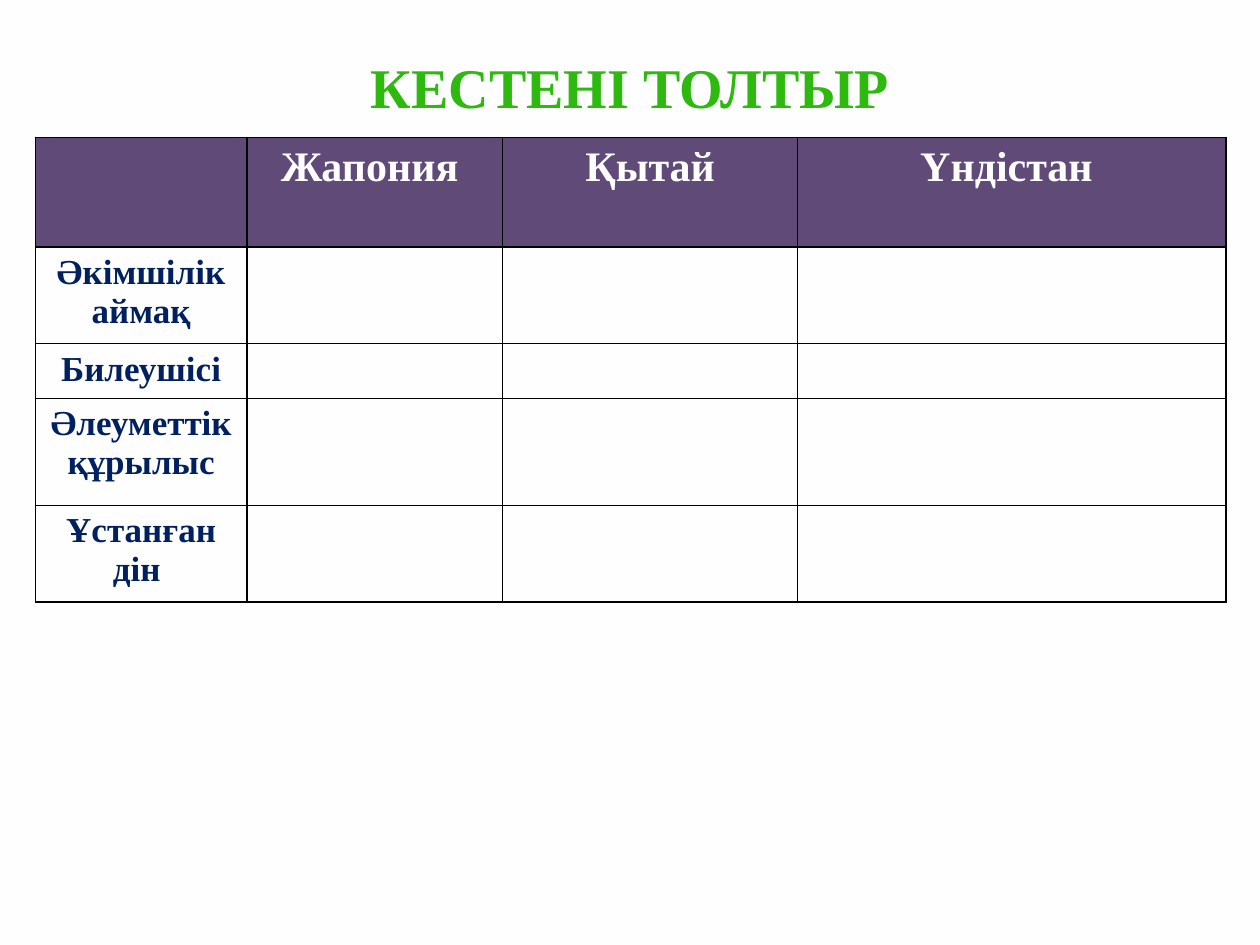
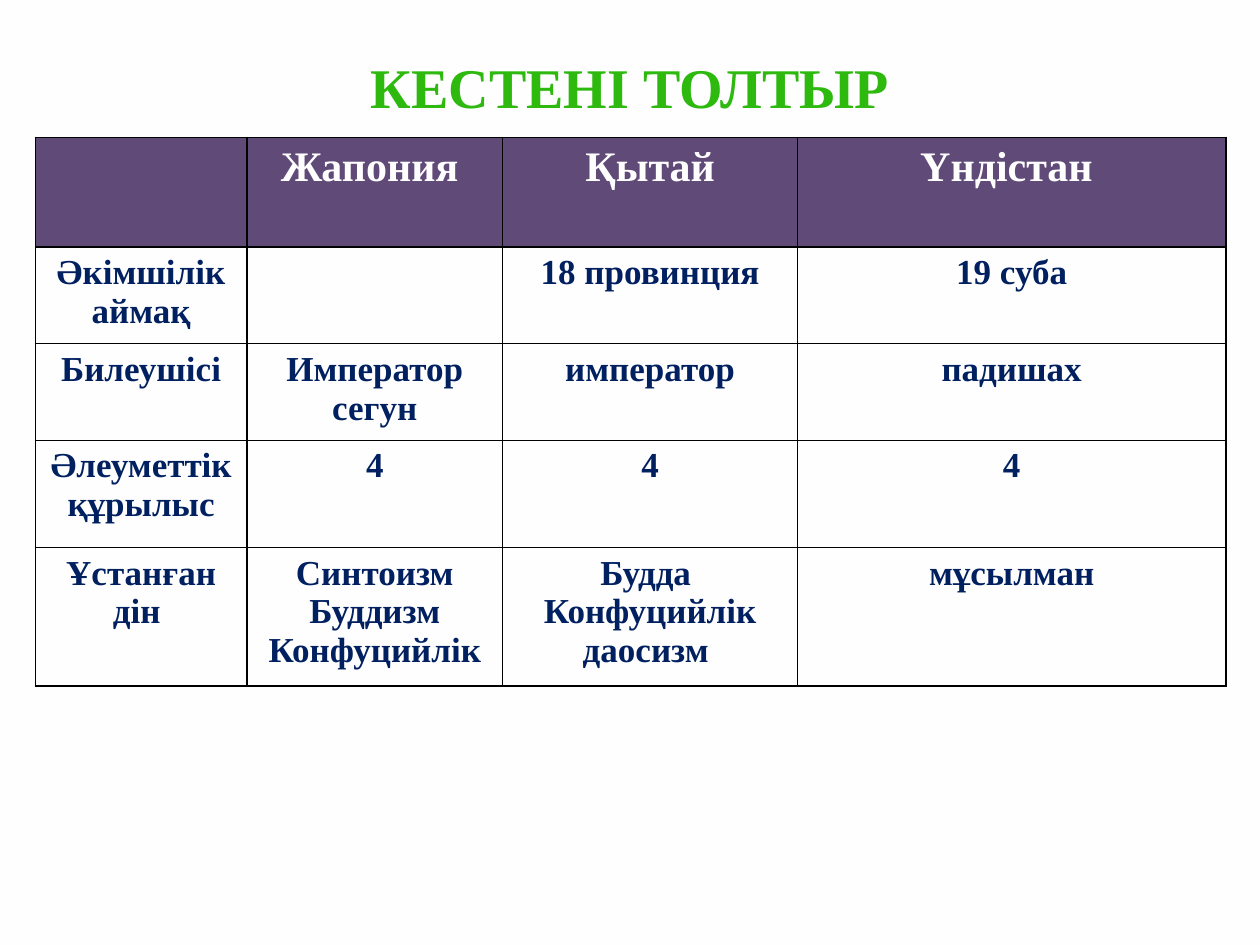
from lxml import etree
from pptx import Presentation
from pptx.dml.color import RGBColor
from pptx.enum import text
from pptx.oxml import ns
from pptx.util import Inches, Pt

COLORS = {
    "paper": "FFFEFF",
    "title": "2DB90E",
    "header": "604A78",
    "entry": "002060",
    "border": "000000",
}
FONT = "Times New Roman"
TITLE = "КЕСТЕНІ ТОЛТЫР"
TITLE_BOX = (0.5, 0.06, 9, 1.25)
TABLE_BOX = (0.28, 1.09, 9.45)
COLUMN_WIDTHS = (1.68, 2.03, 2.34, 3.4)
COUNTRIES = ("", "Жапония ", "Қытай", "Үндістан ")
TOPICS = ("Әкімшілік аймақ", "Билеушісі", "Әлеуметтік құрылыс", "Ұстанған дін ")
BLANK_ANSWERS = [("", "", "")] * len(TOPICS)
ANSWERS = [
    ("", "18 провинция", "19 суба"),
    ("Император\nсегун", "император", "падишах"),
    ("4", "4", "4"),
    ("Синтоизм\nБуддизм\nКонфуцийлік", "Будда \nКонфуцийлік\nдаосизм ", "мұсылман"),
]
BLANK_HEIGHTS = (0.87, 0.72, 0.41, 0.85, 0.72)
ANSWER_HEIGHTS = (0.87, 0.72, 0.72, 0.85, 1.03)


def write(frame, words, size, color):
    """Fill a text frame with centred bold paragraphs, one per line."""
    frame.text = words
    for paragraph in frame.paragraphs:
        paragraph.alignment = text.PP_ALIGN.CENTER
        font = paragraph.font
        font.name, font.size, font.bold = FONT, Pt(size), True
        font.color.rgb = RGBColor.from_string(COLORS[color])


def add_borders(cell):
    """Draw a one-point line on every side of a cell."""
    properties = cell._tc.get_or_add_tcPr()
    for position, side in enumerate(("lnL", "lnR", "lnT", "lnB")):
        line = etree.Element(ns.qn(f"a:{side}"), w=str(Pt(1)))
        fill = etree.SubElement(line, ns.qn("a:solidFill"))
        etree.SubElement(fill, ns.qn("a:srgbClr"), val=COLORS["border"])
        properties.insert(position, line)


def add_title(slide, box):
    """Place the slide title in the given box."""
    frame = slide.shapes.add_textbox(*map(Inches, box)).text_frame
    frame.word_wrap = True
    frame.vertical_anchor = text.MSO_ANCHOR.MIDDLE
    write(frame, TITLE, 32, "title")


def add_comparison(slide, box, answers, heights):
    """Place the table that compares the countries topic by topic."""
    entries = [COUNTRIES] + [(topic, *row) for topic, row in zip(TOPICS, answers)]
    table = slide.shapes.add_table(
        len(entries), len(COUNTRIES), *map(Inches, (*box, sum(heights)))
    ).table
    for column, width in zip(table.columns, COLUMN_WIDTHS):
        column.width = Inches(width)
    for row, height in zip(table.rows, heights):
        row.height = Inches(height)
    for row_index, row in enumerate(entries):
        is_header = row_index == 0
        for column_index, words in enumerate(row):
            cell = table.cell(row_index, column_index)
            cell.fill.solid()
            background = "header" if is_header else "paper"
            cell.fill.fore_color.rgb = RGBColor.from_string(COLORS[background])
            add_borders(cell)
            size, color = (24, "paper") if is_header else (20, "entry")
            write(cell.text_frame, words, size, color)


def add_table_slide(deck, answers, heights):
    """Add a slide with the title and the comparison table."""
    slide = deck.slides.add_slide(deck.slide_layouts[6])
    background = slide.background.fill
    background.solid()
    background.fore_color.rgb = RGBColor.from_string(COLORS["paper"])
    add_title(slide, TITLE_BOX)
    add_comparison(slide, TABLE_BOX, answers, heights)


def main():
    """Build the exercise slide and its solution."""
    deck = Presentation()
    deck.slide_width, deck.slide_height = Inches(10), Inches(7.5)
    add_table_slide(deck, BLANK_ANSWERS, BLANK_HEIGHTS)
    add_table_slide(deck, ANSWERS, ANSWER_HEIGHTS)
    deck.save("out.pptx")


if __name__ == "__main__":
    main()
